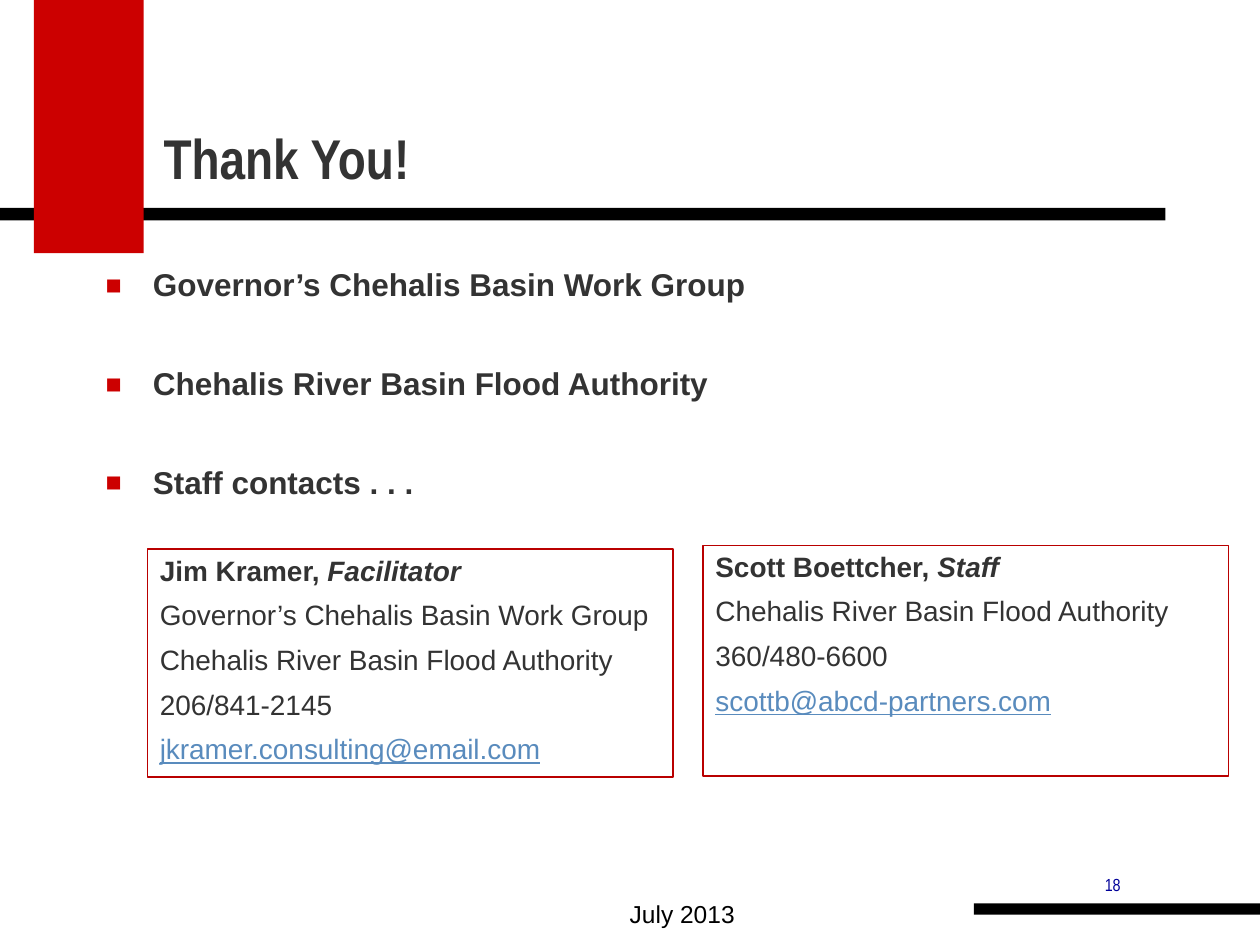
from lxml import etree
from pptx import Presentation
from pptx import util as u
from pptx.dml.color import RGBColor
from pptx.enum import shapes, text
from pptx.oxml.ns import qn

COLS, ROWS = 100, 75
CELL = u.Inches(0.1)
RED, BLACK, GREY, EDGE = "CC0000", "000000", "333333", "B90000"
BODY = dict(name="Arial", size=16, color=GREY)
LINK = dict(color="598BBD", underline=True)
HEAD = dict(BODY, size=18, bold=True)

POINTS = ["Governor’s Chehalis Basin Work Group",
          "Chehalis River Basin Flood Authority",
          "Staff contacts . . ."]
CARDS = [
    ((11.7, 43.6, 41.7, 18.1), "Jim Kramer, ", "Facilitator",
     ["Governor’s Chehalis Basin Work Group",
      "Chehalis River Basin Flood Authority", "206/841-2145"],
     "jkramer.consulting@email.com"),
    ((55.8, 43.3, 41.7, 18.3), "Scott Boettcher, ", "Staff",
     ["Chehalis River Basin Flood Authority", "360/480-6600"],
     "scottb@abcd-partners.com"),
]


def tint(code):
    return RGBColor.from_string(code)


def grid(box):
    return [round(n * CELL) for n in box]


def style(font, **form):
    for key, val in form.items():
        if key == "color":
            font.color.rgb = tint(val)
        else:
            setattr(font, key, u.Pt(val) if key == "size" else val)


def write(para, *runs):
    for words, form in runs:
        run = para.add_run()
        run.text = words
        style(run.font, **form)


def block(slide, box, fill=None, line=None):
    shape = slide.shapes.add_shape(shapes.MSO_SHAPE.RECTANGLE, *grid(box))
    shape.shadow.inherit = False
    if fill:
        shape.fill.solid()
        shape.fill.fore_color.rgb = tint(fill)
    else:
        shape.fill.background()
    if line:
        shape.line.color.rgb = tint(line)
        shape.line.width = u.Pt(1)
    else:
        shape.line.fill.background()
    return shape


def label(slide, box, words, form, align="LEFT", anchor="TOP", wrap=True):
    frame = slide.shapes.add_textbox(*grid(box)).text_frame
    frame.word_wrap = wrap
    frame.vertical_anchor = text.MSO_ANCHOR[anchor]
    para = frame.paragraphs[0]
    para.alignment = text.PP_ALIGN[align]
    write(para, (words, form))


def stack(frame, lines, gap):
    """Write one paragraph for each list of runs, with a gap between them."""
    frame.word_wrap = True
    frame.vertical_anchor = text.MSO_ANCHOR.TOP
    for i, runs in enumerate(lines):
        para = frame.add_paragraph() if i else frame.paragraphs[0]
        form = dict(alignment=text.PP_ALIGN.LEFT, line_spacing=0.95,
                    space_before=u.Pt(gap if i else 0))
        for key, val in form.items():
            setattr(para, key, val)
        write(para, *runs)


def bullet(para):
    prop = para._p.get_or_add_pPr()
    dent = round(3.75 * CELL)
    prop.set("marL", str(dent))
    prop.set("indent", str(-dent))
    hue = etree.SubElement(prop, qn("a:buClr"))
    etree.SubElement(hue, qn("a:srgbClr"), val=RED)
    for tag, key, val in (("buSzPct", "val", "85000"),
                          ("buFont", "typeface", "Arial"),
                          ("buChar", "char", "■")):
        etree.SubElement(prop, qn("a:" + tag)).set(key, val)


def frame_art(slide):
    for box, fill in (((0, 16.5, 92.5, 1), BLACK),
                      ((2.7, 0, 8.7, 20.1), RED),
                      ((77.3, 71.7, 22.7, 0.9), BLACK)):
        block(slide, box, fill)


def points(slide, box):
    frame = slide.shapes.add_textbox(*grid(box)).text_frame
    stack(frame, [[(item, HEAD)] for item in POINTS], 35.8)
    for para in frame.paragraphs:
        bullet(para)


def card(slide, box, name, role, lines, mail):
    bold = dict(BODY, bold=True)
    rows = [[(name, bold), (role, dict(bold, italic=True))]]
    rows += [[(line, BODY)] for line in lines]
    rows.append([(mail, dict(BODY, **LINK))])
    stack(block(slide, box, line=EDGE).text_frame, rows, 7.3)


def main():
    deck = Presentation()
    deck.slide_width, deck.slide_height = COLS * CELL, ROWS * CELL
    slide = deck.slides.add_slide(deck.slide_layouts[6])
    frame_art(slide)
    label(slide, (86.7, 68.9, 3.4, 2.7), "18",
          dict(name="Arial Narrow", size=10, color="000099"), wrap=False)
    label(slide, (12, 3.1, 85, 12.5), "Thank You!",
          dict(name="Arial Narrow", size=32, color=GREY, bold=True),
          anchor="BOTTOM")
    label(slide, (38.3, 69.2, 31.7, 5), "July 2013",
          dict(name="Arial", size=14, color=BLACK), "CENTER", "BOTTOM")
    for item in CARDS:
        card(slide, *item)
    points(slide, (7.4, 20.8, 83.7, 20.8))
    deck.save("out.pptx")


if __name__ == "__main__":
    main()
